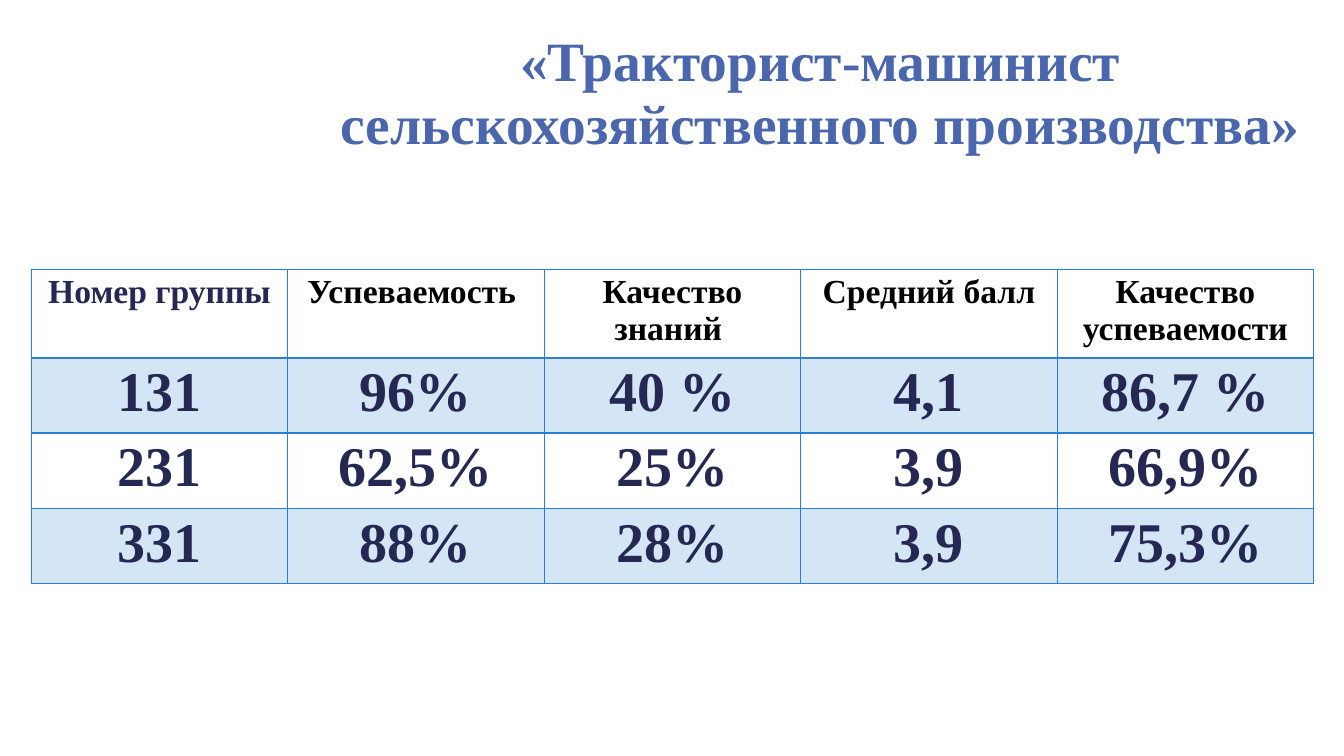
from lxml import etree
from pptx import Presentation
from pptx.dml.color import RGBColor
from pptx.enum.text import MSO_ANCHOR, PP_ALIGN
from pptx.oxml.ns import qn
from pptx.util import Inches, Pt

CENTER = PP_ALIGN.CENTER
MIDDLE = MSO_ANCHOR.MIDDLE
FONT = "Times New Roman"
COLORS = {"title": "4A66AC", "navy": "242852", "black": "000000", "blue": "297FD5"}

HEADINGS = ["Номер группы", "Успеваемость ", "Качество знаний ",
            "Средний балл", "Качество успеваемости"]
GROUPS = [
    ["131", "96%", "40 %", "4,1", "86,7 %"],
    ["231", "62,5%", "25%", "3,9", "66,9%"],
    ["331", "88%", "28%", "3,9", "75,3%"],
]
HEADER_HEIGHT, GROUP_HEIGHT, COLUMN_WIDTH = 0.83, 0.715, 2.544


def write(frame, text, size, color):
    paragraph = frame.paragraphs[0]
    paragraph.alignment = CENTER
    run = paragraph.add_run()
    run.text = text
    run.font.name = FONT
    run.font.size = Pt(size)
    run.font.bold = True
    run.font.color.rgb = RGBColor.from_string(COLORS[color])
    return paragraph


def add_color(parent, color, alpha=100):
    fill = etree.SubElement(parent, qn("a:solidFill"))
    rgb = etree.SubElement(fill, qn("a:srgbClr"), val=COLORS[color])
    if alpha < 100:
        etree.SubElement(rgb, qn("a:alpha"), val=str(alpha * 1000))


def style_cell(cell, bottom_width, above_width, shaded):
    cell.margin_top = cell.margin_bottom = Inches(0.04)
    properties = cell._tc.get_or_add_tcPr()
    # Borders come before the fill in the cell properties
    widths = {"a:lnL": 1, "a:lnR": 1, "a:lnT": above_width, "a:lnB": bottom_width}
    for side, width in widths.items():
        border = etree.SubElement(properties, qn(side), w=str(Pt(width)))
        add_color(border, "blue")
    if shaded:
        add_color(properties, "blue", 20)
    else:
        cell.fill.background()


def add_title(slide, text):
    title = slide.shapes.add_textbox(Inches(3.17), Inches(0.21), Inches(9.93), Inches(1.45))
    frame = title.text_frame
    frame.word_wrap = True
    frame.vertical_anchor = MIDDLE
    write(frame, text, 39.6, "title").line_spacing = 0.95


def add_results(slide):
    rows = [HEADINGS] + GROUPS
    heights = [HEADER_HEIGHT] + [GROUP_HEIGHT] * len(GROUPS)
    results = slide.shapes.add_table(
        len(rows), len(HEADINGS), Inches(0.31), Inches(2.67),
        Inches(COLUMN_WIDTH * len(HEADINGS)), Inches(sum(heights))).table
    for column in results.columns:
        column.width = Inches(COLUMN_WIDTH)
    for r, values in enumerate(rows):
        results.rows[r].height = Inches(heights[r])
        for c, value in enumerate(values):
            cell = results.cell(r, c)
            style_cell(cell, 2 if r == 0 else 1, 2 if r == 1 else 1, r % 2 == 1)
            color = "black" if r == 0 and c > 0 else "navy"
            write(cell.text_frame, value, 24 if r == 0 else 40, color)


def main():
    deck = Presentation()
    deck.slide_width, deck.slide_height = Inches(13.33), Inches(7.5)
    slide = deck.slides.add_slide(deck.slide_layouts[6])
    add_title(slide, "«Тракторист-машинист сельскохозяйственного производства»")
    add_results(slide)
    deck.save("out.pptx")


if __name__ == "__main__":
    main()
